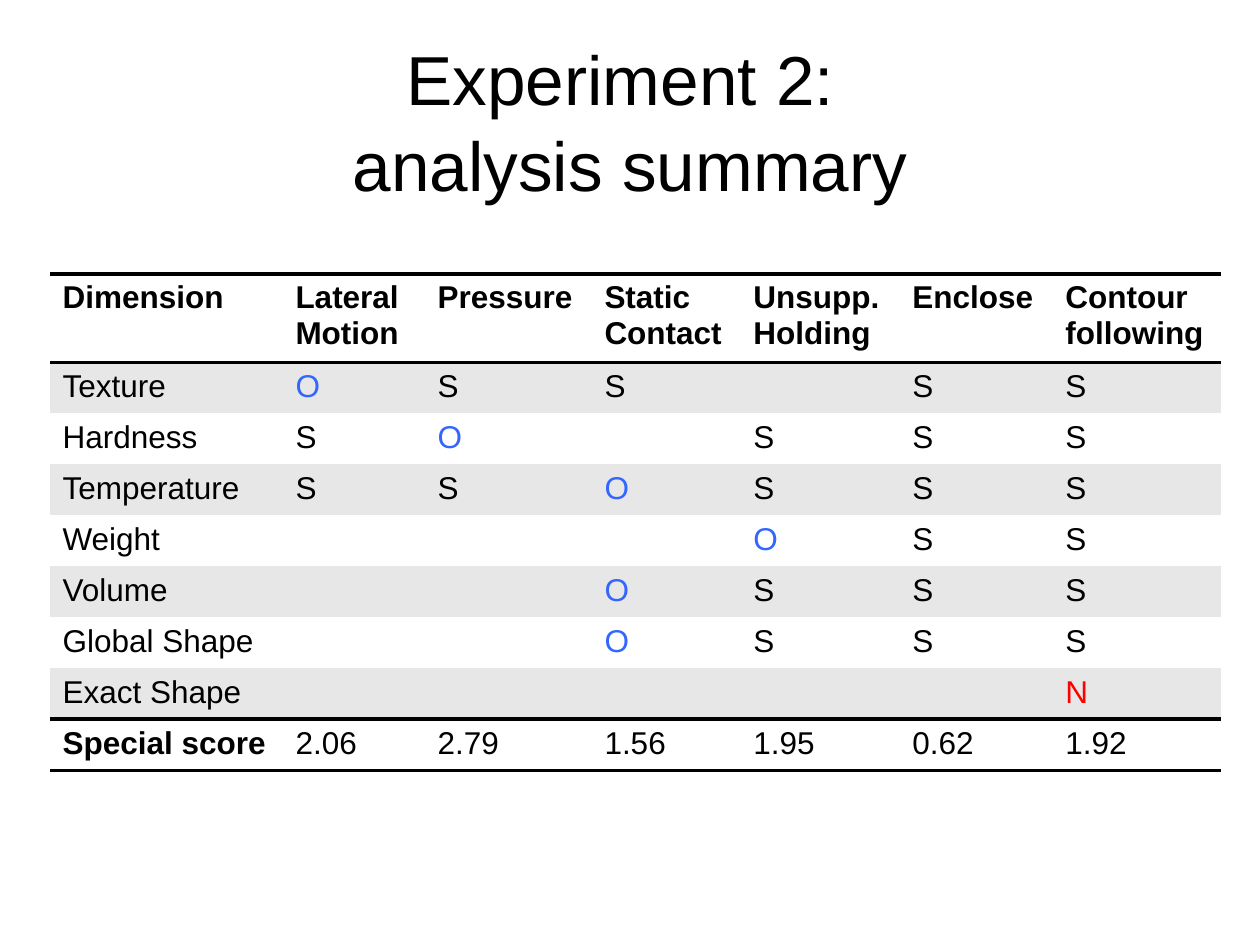
"""Build the slide with the analysis summary table of Experiment 2."""
from lxml import etree
from pptx import Presentation
from pptx.dml.color import RGBColor
from pptx.enum.text import MSO_ANCHOR, PP_ALIGN
from pptx.oxml.ns import qn
from pptx.util import Emu, Pt

CENTER, MIDDLE = PP_ALIGN.CENTER, MSO_ANCHOR.MIDDLE
BLACK = RGBColor(0x00, 0x00, 0x00)
WHITE = RGBColor(0xFF, 0xFF, 0xFF)
GREY = RGBColor(0xE7, 0xE7, 0xE7)
BLUE = RGBColor(0x33, 0x66, 0xFF)
RED = RGBColor(0xFF, 0x00, 0x00)
FONT = "Arial"

TITLE = ["Experiment 2: ", "analysis summary"]
HEADER = ["Dimension", "Lateral Motion", "Pressure", "Static Contact",
          "Unsupp. Holding", "Enclose", "Contour following"]
RATINGS = [
    ["Texture", "O", "S", "S", "", "S", "S"],
    ["Hardness", "S", "O", "", "S", "S", "S"],
    ["Temperature", "S", "S", "O", "S", "S", "S"],
    ["Weight", "", "", "", "O", "S", "S"],
    ["Volume", "", "", "O", "S", "S", "S"],
    ["Global Shape", "", "", "O", "S", "S", "S"],
    ["Exact Shape", "", "", "", "", "", "N"],
]
SCORES = ["Special score", "2.06", "2.79", "1.56", "1.95", "0.62", "1.92"]
MARK_COLORS = {"O": BLUE, "N": RED}

TITLE_BOX = (63, 40, 1134, 158)
TABLE_LEFT, TABLE_TOP = 50, 274
COL_WIDTHS = [233, 142, 167, 149, 159, 153, 168]
HEADER_HEIGHT, ROW_HEIGHT = 83, 51


def px(n):
    return Emu(round(n * 914400 / 126))


def add_run(p, text, size, color=BLACK, bold=False):
    r = p.add_run()
    r.text = text
    r.font.name, r.font.size, r.font.bold = FONT, Pt(size), bold
    r.font.color.rgb = color


def set_borders(cell, widths):
    tcPr = cell._tc.get_or_add_tcPr()
    for i, side in enumerate(("lnL", "lnR", "lnT", "lnB")):
        ln = etree.Element(qn(f"a:{side}"))
        if side in widths:
            ln.set("w", str(Pt(widths[side])))
            fill = etree.SubElement(ln, qn("a:solidFill"))
            etree.SubElement(fill, qn("a:srgbClr"), val=str(BLACK))
        else:
            etree.SubElement(ln, qn("a:noFill"))
        tcPr.insert(i, ln)


def add_title(s):
    tf = s.shapes.add_textbox(*map(px, TITLE_BOX)).text_frame
    tf.word_wrap = True
    tf.vertical_anchor = MIDDLE
    tf.margin_top = tf.margin_bottom = 0
    p = tf.paragraphs[0]
    p.alignment, p.line_spacing = CENTER, 1.04
    for i, line in enumerate(TITLE):
        if i:
            p.add_line_break()
        add_run(p, line, 39.6)


def add_summary(s):
    rows = [HEADER, *RATINGS, SCORES]
    last = len(rows) - 1
    heights = [HEADER_HEIGHT] + [ROW_HEIGHT] * last
    borders = {0: {"lnT": 2, "lnB": 2}, 1: {"lnT": 2},
               last - 1: {"lnB": 2.25}, last: {"lnT": 2.25, "lnB": 2}}
    table = s.shapes.add_table(
        len(rows), len(HEADER), px(TABLE_LEFT), px(TABLE_TOP),
        px(sum(COL_WIDTHS)), px(sum(heights))).table
    for col, width in zip(table.columns, COL_WIDTHS):
        col.width = px(width)
    for i, row in enumerate(rows):
        table.rows[i].height = px(heights[i])
        for j, text in enumerate(row):
            cell = table.cell(i, j)
            cell.fill.solid()
            cell.fill.fore_color.rgb = GREY if i % 2 else WHITE
            set_borders(cell, borders.get(i, {}))
            p = cell.text_frame.paragraphs[0]
            p.font.size = Pt(18)
            if text:
                bold = i == 0 or (i == last and j == 0)
                add_run(p, text, 18, MARK_COLORS.get(text, BLACK), bold)


def main():
    prs = Presentation()
    prs.slide_width, prs.slide_height = px(1260), px(945)
    s = prs.slides.add_slide(prs.slide_layouts[6])
    add_title(s)
    add_summary(s)
    prs.save("out.pptx")


if __name__ == "__main__":
    main()
